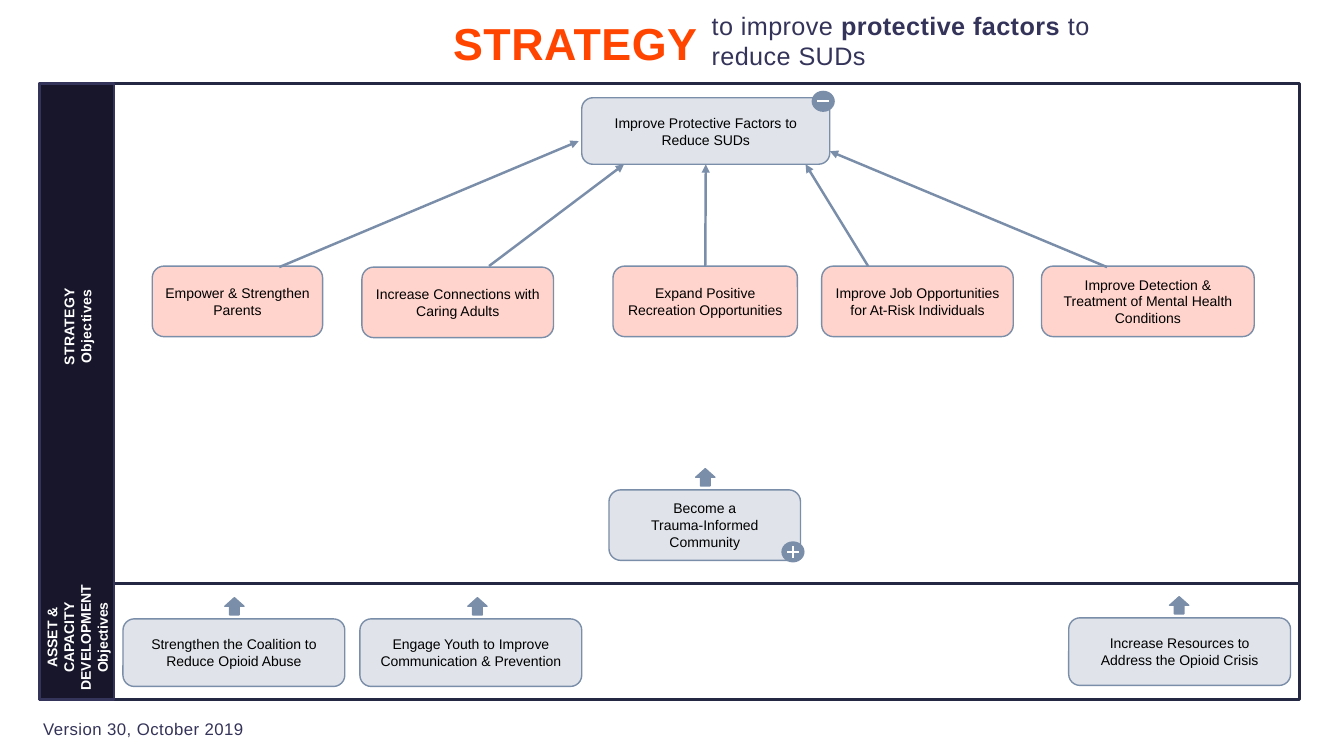
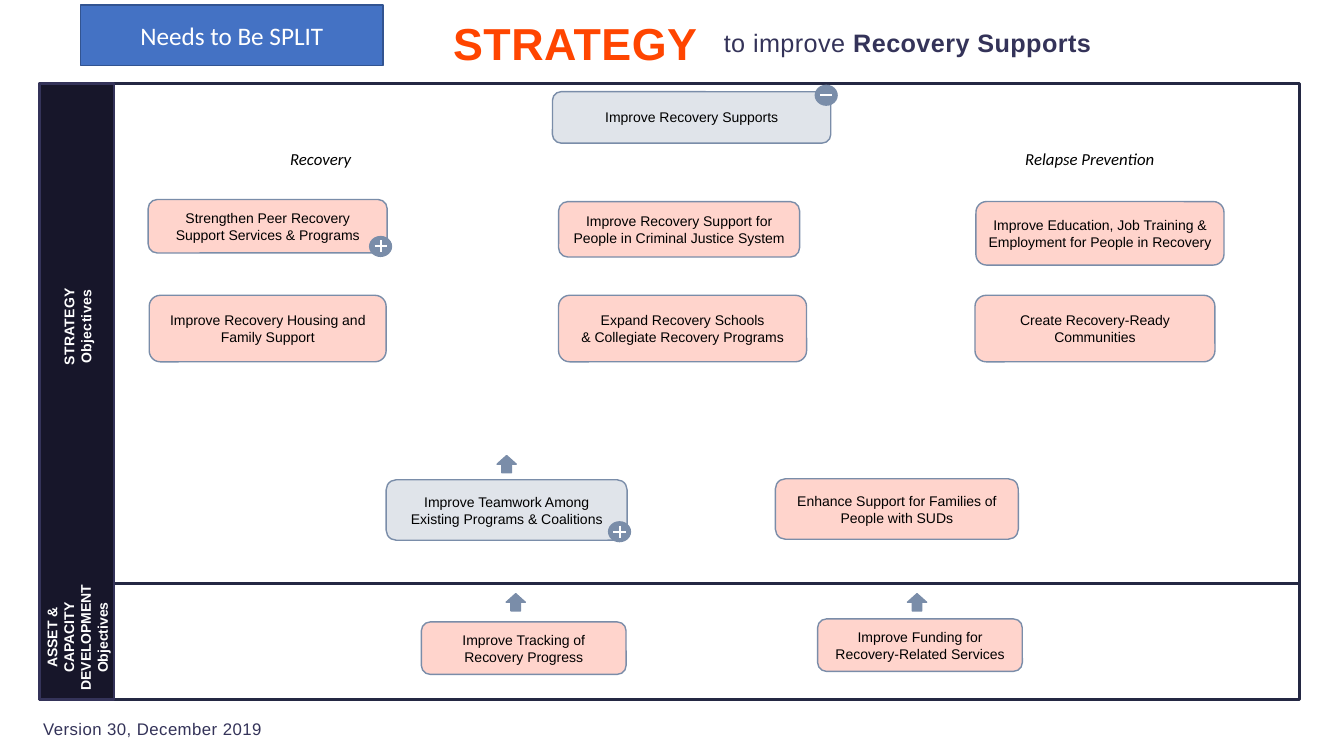
"""Build two strategy map slides with a shared frame, sidebar, title and version line."""
from lxml import etree
from pptx import Presentation
from pptx.dml.color import RGBColor
from pptx.enum import shapes, text
from pptx.oxml.ns import qn
from pptx.util import Inches, Pt

NAVY = RGBColor(0x24, 0x28, 0x43)
INK = RGBColor(0x34, 0x33, 0x59)
SIDEBAR = RGBColor(0x17, 0x16, 0x2A)
ORANGE = RGBColor(0xFF, 0x45, 0x00)
STEEL = RGBColor(0x7A, 0x8D, 0xA9)
GRAY = RGBColor(0xE0, 0xE4, 0xEA)
PINK = RGBColor(0xFF, 0xD4, 0xCC)
BLUE = RGBColor(0x44, 0x72, 0xC4)
DARK_BLUE = RGBColor(0x32, 0x54, 0x91)
WHITE = RGBColor(0xFF, 0xFF, 0xFF)
BLACK = RGBColor(0x00, 0x00, 0x00)

KINDS = shapes.MSO_SHAPE
CENTER, LEFT = text.PP_ALIGN.CENTER, text.PP_ALIGN.LEFT

TITLE = {"name": "Arial", "size": Pt(32), "bold": True}
SUBTITLE = {"name": "Arial", "size": Pt(18)}
OBJECTIVE = {"name": "Arial", "size": Pt(10)}
BAND = {"name": "Arial", "size": Pt(10), "bold": True}
VERSION = {"name": "Arial", "size": Pt(12)}
THEME = {"name": "Calibri", "size": Pt(12), "italic": True}
FLAG = {"name": "Calibri", "size": Pt(18)}

FRAME_LEFT, FRAME_TOP, FRAME_WIDTH, FRAME_HEIGHT = 0.39, 0.83, 12.5, 6.11
SIDEBAR_WIDTH = 0.74
DIVIDER_Y = 5.79
ARROW_SIZE = (0.19, 0.17)
BADGE_SIZE = (0.23, 0.21)
BADGE_ARM = 0.06
BANDS = [
    ("ASSET & CAPACITY DEVELOPMENT Objectives", (0.09, 5.94, 1.35, 0.77), 0),
    ("STRATEGY Objectives", (0.18, 3.02, 1.18, 0.44), 0.2),
]

SLIDES = [
    {
        "subtitle": [("to improve ", False), ("protective factors ", True), ("to reduce SUDs", False)],
        "subtitle_at": (6.96, 0.05, 4.23, 0.71),
        "version": "Version 30, October 2019",
        "objectives": [
            ("Improve Protective Factors to Reduce SUDs", GRAY, (5.77, 0.97, 2.46, 0.66)),
            ("Empower & Strengthen Parents", PINK, (1.51, 2.64, 1.69, 0.7)),
            ("Increase Connections with Caring Adults", PINK, (3.59, 2.65, 1.9, 0.7)),
            ("Expand Positive Recreation Opportunities", PINK, (6.08, 2.64, 1.83, 0.7)),
            ("Improve Job Opportunities for At-Risk Individuals", PINK, (8.15, 2.64, 1.9, 0.7)),
            ("Improve Detection & Treatment of Mental Health Conditions", PINK, (10.33, 2.64, 2.11, 0.7)),
            ("Become a\nTrauma-Informed Community", GRAY, (6.04, 4.86, 1.9, 0.7)),
            ("Strengthen the Coalition to Reduce Opioid Abuse", GRAY, (1.22, 6.14, 2.2, 0.67)),
            ("Engage Youth to Improve Communication & Prevention", GRAY, (3.57, 6.14, 2.2, 0.67)),
            ("Increase Resources to\nAddress the Opioid Crisis", GRAY, (10.6, 6.13, 2.2, 0.67)),
        ],
        "links": [
            ((2.77, 2.65), (5.74, 1.4)),
            ((4.85, 2.64), (6.19, 1.63)),
            ((8.61, 2.64), (7.99, 1.63)),
            ((10.98, 2.65), (8.23, 1.5)),
        ],
        "joined": [("Expand Positive Recreation Opportunities", "Improve Protective Factors to Reduce SUDs")],
        "arrows": [(6.9, 4.65), (2.23, 5.93), (4.64, 5.93), (11.6, 5.92)],
        "badges": [("minus", 8.05, 0.9), ("plus", 7.75, 5.37)],
        "themes": [],
        "flags": [],
    },
    {
        "subtitle": [("to improve ", False), ("Recovery Supports", True)],
        "subtitle_at": (7.08, 0.22, 3.91, 0.4),
        "version": "Version 30, December 2019",
        "objectives": [
            ("Improve Recovery Supports", GRAY, (5.48, 0.91, 2.76, 0.51)),
            ("Strengthen Peer Recovery Support Services & Programs", PINK, (1.47, 1.98, 2.37, 0.53)),
            ("Improve Recovery Support for People in Criminal Justice System", PINK, (5.54, 2, 2.39, 0.55)),
            ("Improve Education, Job Training & Employment for People in Recovery", PINK, (9.68, 2, 2.46, 0.63)),
            ("Improve Recovery Housing and Family Support", PINK, (1.48, 2.93, 2.35, 0.66)),
            ("Expand Recovery Schools\n& Collegiate Recovery Programs", PINK, (5.54, 2.93, 2.46, 0.66)),
            ("Create Recovery-Ready Communities", PINK, (9.67, 2.93, 2.38, 0.66)),
            ("Improve Teamwork Among Existing Programs & Coalitions", GRAY, (3.83, 4.76, 2.39, 0.6)),
            ("Enhance Support for Families of People with SUDs", PINK, (7.69, 4.75, 2.41, 0.6)),
            ("Improve Tracking of Recovery Progress", PINK, (4.18, 6.17, 2.03, 0.52)),
            ("Improve Funding for Recovery-Related Services", PINK, (8.11, 6.14, 2.03, 0.52)),
        ],
        "links": [],
        "joined": [],
        "arrows": [(4.93, 4.52), (5.02, 5.89), (9, 5.89)],
        "badges": [("minus", 8.08, 0.84), ("plus", 3.66, 2.34), ("plus", 6.03, 5.17)],
        "themes": [("Recovery", (2.78, 1.43, 1.46, 0.3)), ("Relapse Prevention", (10.07, 1.43, 1.58, 0.3))],
        "flags": [("Needs to Be SPLIT", (0.8, 0.05, 3, 0.6))],
    },
]


def inches(lengths):
    return [Inches(length) for length in lengths]


def style_run(run, font, color, spacing=0):
    for attribute, value in font.items():
        setattr(run.font, attribute, value)
    run.font.color.rgb = color
    if spacing:
        run.font._element.set("spc", str(round(spacing * 100)))


def write(shape, lines, font, color, align=LEFT, spacing=0):
    frame = shape.text_frame
    frame.word_wrap = True
    for index, line in enumerate(lines):
        paragraph = frame.add_paragraph() if index else frame.paragraphs[0]
        paragraph.alignment = align
        for words, bold in line:
            run = paragraph.add_run()
            run.text = words
            style_run(run, {"bold": bold, **font}, color, spacing)


def add_label(slide, at, line, font, color, align=LEFT, spacing=0):
    label = slide.shapes.add_textbox(*inches(at))
    write(label, [line], font, color, align, spacing)
    return label


def add_block(canvas, kind, at, fill=None, line=None, width=1):
    block = canvas.add_shape(kind, *inches(at))
    block.shadow.inherit = False
    if fill is None:
        block.fill.background()
    else:
        block.fill.solid()
        block.fill.fore_color.rgb = fill
    if line is None:
        block.line.fill.background()
    else:
        block.line.color.rgb = line
        block.line.width = Pt(width)
    return block


def add_titled_block(slide, kind, at, words, fill, line, font, color):
    block = add_block(slide.shapes, kind, at, fill, line)
    frame = block.text_frame
    frame.vertical_anchor = text.MSO_ANCHOR.MIDDLE
    frame.margin_left = frame.margin_right = Inches(0.09)
    write(block, [[(part, False)] for part in words.split("\n")], font, color, CENTER)
    return block


def add_line(canvas, start, end, color, width, arrow=False):
    line = canvas.add_connector(shapes.MSO_CONNECTOR.STRAIGHT, *inches(start + end))
    line.line.color.rgb = color
    line.line.width = Pt(width)
    if arrow:
        etree.SubElement(line.line._get_or_add_ln(), qn("a:tailEnd"), type="triangle")
    etree.SubElement(line._element.spPr, qn("a:effectLst"))
    return line


def add_badge(slide, sign, left, top):
    badge = slide.shapes.add_group_shape().shapes
    width, height = BADGE_SIZE
    add_block(badge, KINDS.OVAL, (left, top, width, height), STEEL)
    x, y = left + width / 2, top + height / 2
    add_line(badge, (x - BADGE_ARM, y), (x + BADGE_ARM, y), WHITE, 1.5)
    if sign == "plus":
        add_line(badge, (x, y - BADGE_ARM), (x, y + BADGE_ARM), WHITE, 1.5)


def add_shared_parts(slide, content):
    frame_at = (FRAME_LEFT, FRAME_TOP, FRAME_WIDTH, FRAME_HEIGHT)
    add_block(slide.shapes, KINDS.RECTANGLE, frame_at, None, NAVY, 2.25)
    add_line(slide.shapes, (FRAME_LEFT, DIVIDER_Y), (FRAME_LEFT + FRAME_WIDTH, DIVIDER_Y), NAVY, 2.25)
    sidebar_at = (FRAME_LEFT, FRAME_TOP, SIDEBAR_WIDTH, FRAME_HEIGHT)
    add_block(slide.shapes, KINDS.RECTANGLE, sidebar_at, SIDEBAR, INK, 1.75)
    for words, at, spacing in BANDS:
        add_label(slide, at, [(words, True)], BAND, WHITE, CENTER, spacing).rotation = 270
    add_label(slide, (4.33, 0.11, 2.75, 0.64), [("STRATEGY", True)], TITLE, ORANGE, CENTER, 0.3)
    add_label(slide, content["subtitle_at"], content["subtitle"], SUBTITLE, INK, LEFT, 0.3)
    add_label(slide, (0.33, 7.08, 2.49, 0.3), [(content["version"], False)], VERSION, INK, LEFT, 0.3)


def build_slide(deck, content):
    slide = deck.slides.add_slide(deck.slide_layouts[6])
    add_shared_parts(slide, content)
    objectives = {
        words: add_titled_block(slide, KINDS.ROUNDED_RECTANGLE, at, words, fill, STEEL, OBJECTIVE, BLACK)
        for words, fill, at in content["objectives"]
    }
    for start, end in content["links"]:
        add_line(slide.shapes, start, end, STEEL, 1.75, arrow=True)
    for source, target in content["joined"]:
        link = add_line(slide.shapes, (0, 0), (1, 1), STEEL, 1.75, arrow=True)
        link.begin_connect(objectives[source], 0)
        link.end_connect(objectives[target], 2)
    for position in content["arrows"]:
        add_block(slide.shapes, KINDS.UP_ARROW, position + ARROW_SIZE, STEEL, STEEL)
    for badge in content["badges"]:
        add_badge(slide, *badge)
    for words, at in content["themes"]:
        add_label(slide, at, [(words, False)], THEME, BLACK)
    for words, at in content["flags"]:
        add_titled_block(slide, KINDS.RECTANGLE, at, words, BLUE, DARK_BLUE, FLAG, WHITE)


def main():
    deck = Presentation()
    deck.slide_width, deck.slide_height = Inches(13.33), Inches(7.5)
    for content in SLIDES:
        build_slide(deck, content)
    deck.save("out.pptx")


if __name__ == "__main__":
    main()
